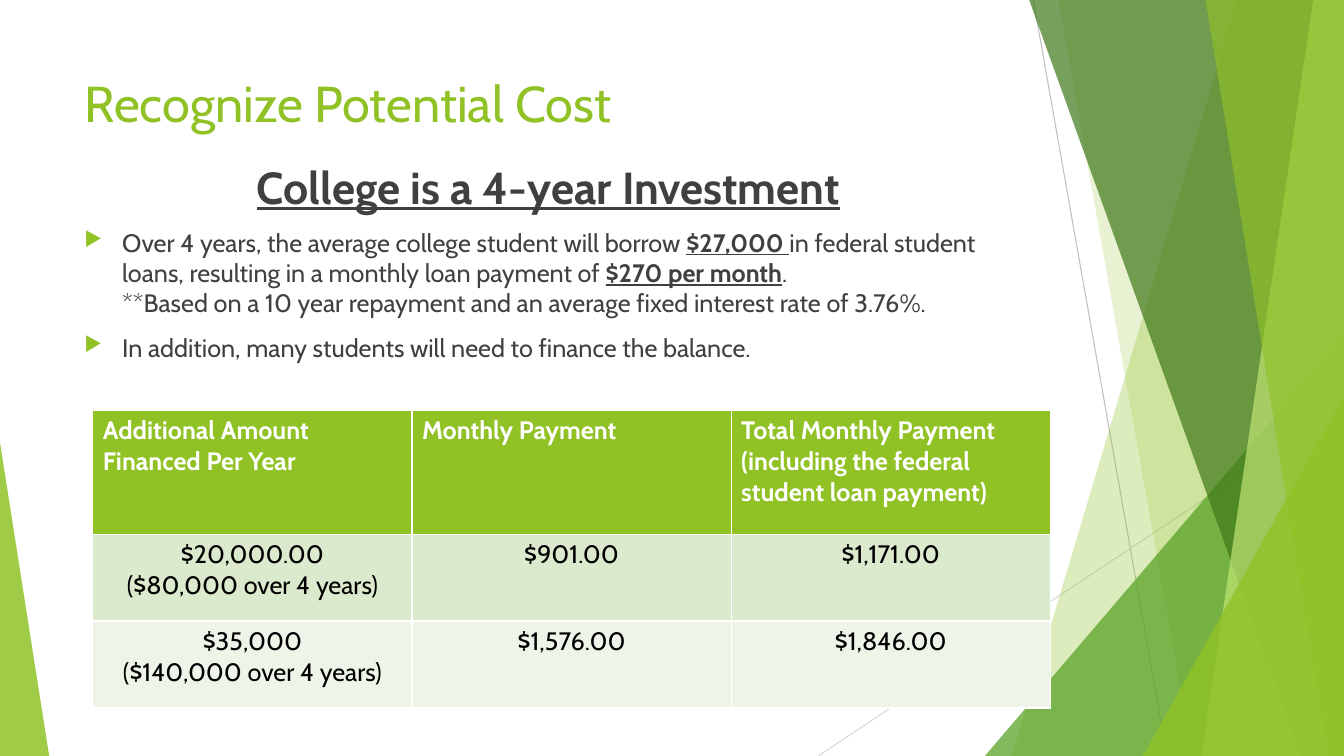
from lxml.etree import SubElement
from pptx import Presentation
from pptx.dml.color import RGBColor
from pptx.enum.shapes import MSO_CONNECTOR as Connector, MSO_SHAPE as Shape
from pptx.enum.text import MSO_ANCHOR as Anchor, PP_ALIGN as Align
from pptx.oxml.ns import qn
from pptx.util import Cm, Pt

LIME = RGBColor(0x90, 0xC2, 0x26)
PALE_LIME = RGBColor(0xC0, 0xE4, 0x74)
GREEN = RGBColor(0x54, 0xA0, 0x21)
DARK_GREEN = RGBColor(0x3F, 0x78, 0x19)
CHARCOAL = RGBColor(0x40, 0x40, 0x40)
BLACK = RGBColor(0, 0, 0)
WHITE = RGBColor(0xFF, 0xFF, 0xFF)
GRAY = RGBColor(0xBF, 0xBF, 0xBF)
LIGHT_GRAY = RGBColor(0xD9, 0xD9, 0xD9)
ROW_FILLS = [LIME, RGBColor(0xDB, 0xE9, 0xCD), RGBColor(0xEE, 0xF4, 0xE8)]

WIDTH, HEIGHT = 33.87, 19.05
STRONG = {"bold": True, "underline": True}
PLAIN = {"bold": False, "underline": False}


class SlideBuilder:
    font = "Cabin"

    def __init__(self, deck):
        self.page = deck.slides.add_slide(deck.slide_layouts[5])
        self.shapes = self.page.shapes

    def line(self, start, end, color):
        line = self.shapes.add_connector(
            Connector.STRAIGHT, *(Cm(value) for value in start + end))
        line.line.color.rgb = color
        line.line.width = Pt(0.75)
        SubElement(line._element.spPr, qn("a:effectLst"))

    def paint(self, shape, color, opacity):
        shape.shadow.inherit = False
        shape.fill.solid()
        shape.fill.fore_color.rgb = color
        shape.line.fill.background()
        tint = shape._element.spPr.find(qn("a:solidFill"))[0]
        SubElement(tint, qn("a:alpha"), val=str(opacity * 1000))

    def band(self, top_x, bottom_x, color, opacity):
        outline = self.shapes.build_freeform(Cm(top_x), Cm(-0.02))
        corners = [(WIDTH, -0.02), (WIDTH, HEIGHT), (bottom_x, HEIGHT)]
        outline.add_line_segments([(Cm(x), Cm(y)) for x, y in corners])
        self.paint(outline.convert_to_shape(), color, opacity)

    def triangle(self, left, top, width, apex, color, opacity):
        shape = self.shapes.add_shape(
            Shape.ISOSCELES_TRIANGLE, Cm(left), Cm(top), Cm(width), Cm(HEIGHT - top))
        shape.adjustments[0] = apex
        self.paint(shape, color, opacity)

    def add_text(self, para, text, color, size, **style):
        for index, piece in enumerate(text.split("\n")):
            if index:
                para.add_line_break()
            span = para.add_run()
            span.text = piece
            span.font.color.rgb = color
            for name, value in {"name": self.font, "size": Pt(size), **style}.items():
                setattr(span.font, name, value)

    def title(self, text, left, top, width, height):
        box = self.shapes.title
        place = {"left": left, "top": top, "width": width, "height": height}
        for name, value in place.items():
            setattr(box, name, Cm(value))
        box.text_frame.vertical_anchor = Anchor.TOP
        para = box.text_frame.paragraphs[0]
        para.alignment = Align.LEFT
        self.add_text(para, text, LIME, 36)

    def bullet(self, para):
        properties = para._p.get_or_add_pPr()
        properties.set("marL", str(Cm(0.95)))
        properties.set("indent", str(Cm(-0.95)))
        color = SubElement(properties, qn("a:buClr"))
        SubElement(color, qn("a:srgbClr"), val=str(LIME))
        SubElement(properties, qn("a:buSzPct"), val="80000")
        SubElement(properties, qn("a:buChar"), char="▶")

    def body(self, heading, points, *place):
        frame = self.shapes.add_textbox(*(Cm(value) for value in place)).text_frame
        frame.word_wrap = True
        para = frame.paragraphs[0]
        para.alignment = Align.CENTER
        para.space_before = Pt(10)
        self.add_text(para, heading, CHARCOAL, 32, **STRONG)
        for point in points:
            para = frame.add_paragraph()
            para.space_before = Pt(10)
            self.bullet(para)
            for text, style in point:
                self.add_text(para, text, CHARCOAL, 18, **style)

    def table(self, rows, heights, left, top, width):
        table = self.shapes.add_table(
            len(rows), len(rows[0]), Cm(left), Cm(top), Cm(width), Cm(sum(heights))).table
        for index, values in enumerate(rows):
            header = index == 0
            table.rows[index].height = Cm(heights[index])
            for cell, text in zip(table.rows[index].cells, values):
                cell.fill.solid()
                cell.fill.fore_color.rgb = ROW_FILLS[index]
                para = cell.text_frame.paragraphs[0]
                para.alignment = Align.LEFT if header else Align.CENTER
                self.add_text(para, text, WHITE if header else BLACK, 18, bold=header)


def main():
    deck = Presentation()
    deck.slide_width, deck.slide_height = Cm(WIDTH), Cm(HEIGHT)
    slide = SlideBuilder(deck)

    slide.line((26.04, 0), (29.41, HEIGHT), GRAY)
    slide.line((WIDTH, 10.24), (20.62, HEIGHT), LIGHT_GRAY)
    slide.band(31.19, 25.5, LIME, 30)
    slide.band(26.67, 30.05, LIME, 20)
    slide.triangle(24.82, 8.46, 9.05, 1, GREEN, 72)
    slide.band(25.93, 32.79, DARK_GREEN, 70)
    slide.band(33.1, 30.28, PALE_LIME, 70)
    slide.band(30.38, 33.48, LIME, 65)
    slide.triangle(28.8, 9.98, 5.07, 1, LIME, 80)
    slide.triangle(0, 11.15, 1.24, 0, LIME, 85)

    slide.title("Recognize Potential Cost", 1.88, 1.7, 23.88, 3.66)
    slide.body(
        "College is a 4-year Investment",
        [
            [
                ("Over 4 years, the average college student will borrow ", PLAIN),
                ("$27,000 ", STRONG),
                ("in federal student loans, resulting in a monthly loan payment of ", PLAIN),
                ("$270 per month", STRONG),
                (".\n**Based on a 10 year repayment and an average fixed "
                 "interest rate of 3.76%.", PLAIN),
            ],
            [("In addition, many students will need to finance the balance.", PLAIN)],
        ],
        1.88, 3.89, 23.88, 12.9)
    slide.table(
        [
            ["Additional Amount Financed Per Year", "Monthly Payment",
             "Total Monthly Payment (including the federal student loan payment)"],
            ["$20,000.00\n($80,000 over 4 years)", "$901.00", "$1,171.00"],
            ["$35,000\n($140,000 over 4 years)", "$1,576.00", "$1,846.00"],
        ],
        [3.12, 2.19, 2.19], 2.34, 10.34, 24.13)
    deck.save("out.pptx")


if __name__ == "__main__":
    main()
